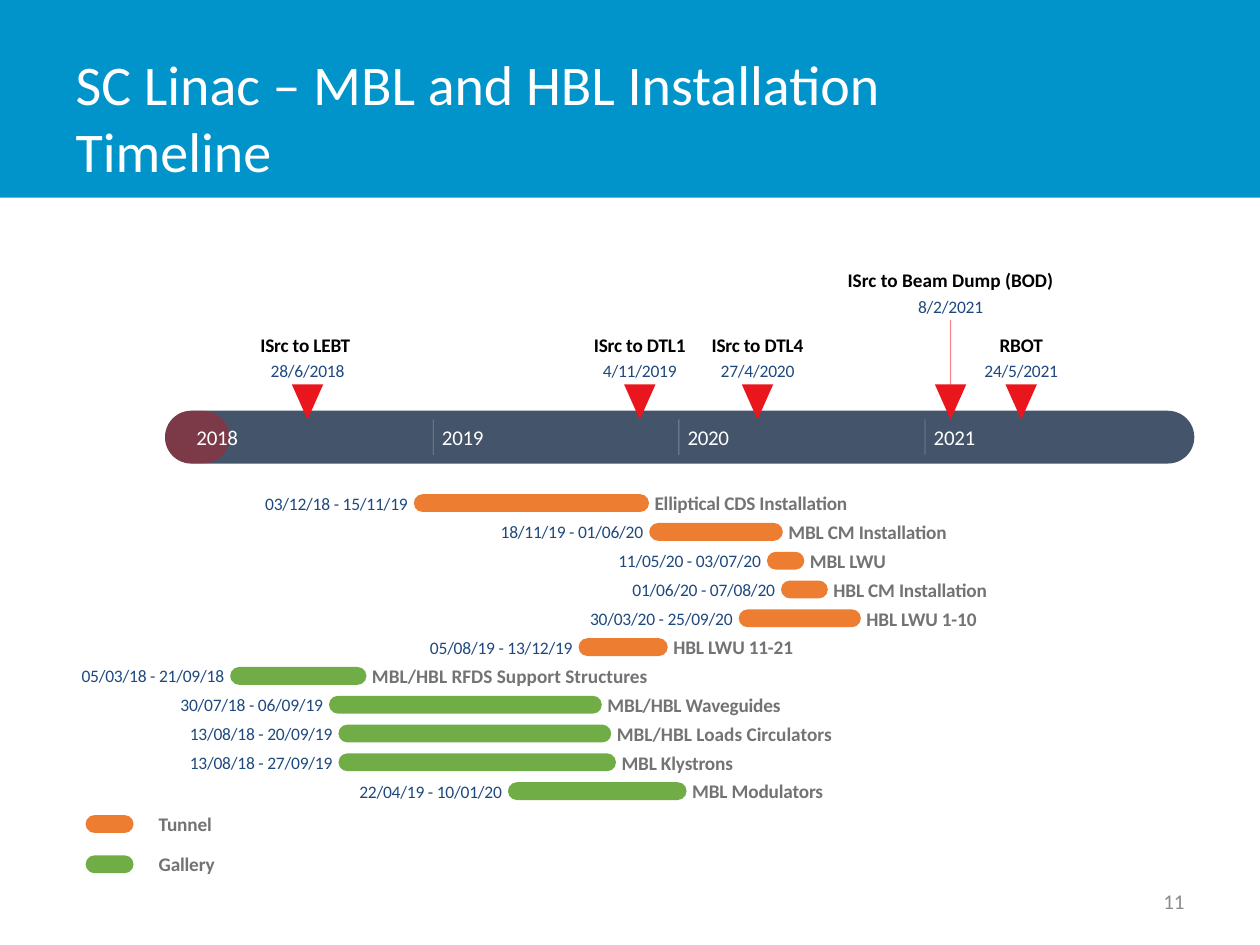
from pptx import Presentation
from pptx.dml.color import RGBColor
from pptx.enum.shapes import MSO_CONNECTOR, MSO_SHAPE
from pptx.enum.text import MSO_ANCHOR, MSO_AUTO_SIZE, PP_ALIGN
from pptx.oxml.ns import qn
from pptx.util import Pt
from lxml.etree import SubElement

BLUE, NAVY, GREY, RED = "0094CA", "1F497E", "737373", "EA161E"
TUNNEL, GALLERY = "ED7D31", "70AD47"
MONTHS = (0, 31, 59, 90, 120, 151, 181, 212, 243, 273, 304, 334)
START, DAY = 107.3, 140.3 / 365
BAR = 10.2

MILES = [
    ("28/6/2018", "ISrc to LEBT ", 55, 0),
    ("4/11/2019", "ISrc to DTL1", 54, 0),
    ("27/4/2020", "ISrc to DTL4", 54, 0),
    ("8/2/2021", "ISrc to Beam Dump (BOD)", 118, 36.7),
    ("24/5/2021", "RBOT", 26, 0),
]
TASKS = [
    ("03/12/18", "15/11/19", "Elliptical CDS Installation", 113, TUNNEL),
    ("18/11/19", "01/06/20", "MBL CM Installation", 93, TUNNEL),
    ("11/05/20", "03/07/20", "MBL LWU", 45, TUNNEL),
    ("01/06/20", "07/08/20", "HBL CM Installation", 90, TUNNEL),
    ("30/03/20", "25/09/20", "HBL LWU 1-10", 65, TUNNEL),
    ("05/08/19", "13/12/19", "HBL LWU 11-21", 70, TUNNEL),
    ("05/03/18", "21/09/18", "MBL/HBL RFDS Support Structures", 158, GALLERY),
    ("30/07/18", "06/09/19", "MBL/HBL Waveguides", 104, GALLERY),
    ("13/08/18", "20/09/19", "MBL/HBL Loads Circulators", 123, GALLERY),
    ("13/08/18", "27/09/19", "MBL Klystrons", 65, GALLERY),
    ("22/04/19", "10/01/20", "MBL Modulators", 77, GALLERY),
]


def color(code):
    return RGBColor.from_string(code)


def spot(date):
    day, month, year = (int(part) for part in date.split("/"))
    year %= 100
    leap = year > 20 or (year == 20 and month > 2)
    return START + DAY * ((year - 18) * 365 + MONTHS[month - 1] + day - 1 + leap)


def fade(fill, share):
    tint = fill.find(".//" + qn("a:srgbClr"))
    SubElement(tint, qn("a:alpha")).set("val", str(share * 1000))


def shape(slide, kind, box, code):
    item = slide.shapes.add_shape(kind, *map(Pt, box))
    item.shadow.inherit = False
    item.fill.solid()
    item.fill.fore_color.rgb = color(code)
    item.line.fill.background()
    return item


def pill(slide, box, code):
    item = shape(slide, MSO_SHAPE.ROUNDED_RECTANGLE, box, code)
    item.adjustments[0] = 0.5
    return item


def rule(slide, x, top, end, code, width, share):
    line = slide.shapes.add_connector(
        MSO_CONNECTOR.STRAIGHT, Pt(x), Pt(top), Pt(x), Pt(end))
    line.line.color.rgb = color(code)
    line.line.width = Pt(width)
    props = line._element.spPr
    fade(props, share)
    SubElement(props, qn("a:effectLst"))


def style(frame, size, code, align=PP_ALIGN.LEFT, bold=False, space=0):
    frame.word_wrap = True
    frame.vertical_anchor = MSO_ANCHOR.MIDDLE
    para = frame.paragraphs[0]
    para.alignment = align
    run = para.runs[0]
    run.font.name = "Calibri"
    run.font.size = Pt(size)
    run.font.bold = bold
    run.font.color.rgb = color(code)
    if space:
        run._r.get_or_add_rPr().set("spc", str(space))


def label(slide, box, text, size, code, align=PP_ALIGN.LEFT, bold=False, space=-10):
    frame = slide.shapes.add_textbox(*map(Pt, box)).text_frame
    frame.margin_left = frame.margin_right = 0
    frame.margin_top = frame.margin_bottom = 0
    frame.text = text
    style(frame, size, code, align, bold, space)


def header(slide, box):
    band = shape(slide, MSO_SHAPE.RECTANGLE, box, BLUE)
    slide.shapes._spTree.insert(2, band._element)
    left, top, width, height = box
    title = slide.shapes.title
    title.left, title.top = Pt(left + 36), Pt(top + 21.6)
    title.width, title.height = Pt(562.3), Pt(height - 1.4 - 21.6)
    frame = title.text_frame
    frame.text = "SC Linac – MBL and HBL Installation Timeline"
    frame.auto_size = MSO_AUTO_SIZE.NONE
    style(frame, 32, "FFFFFF")


def axis(slide, box):
    left, top, width, height = box
    pill(slide, box, "44546A")
    past = pill(slide, (left, top, 36.9, height), "FF0000")
    fade(past._element.spPr, 30)
    for year in range(2018, 2022):
        x = spot(f"1/1/{year}")
        if year > 2018:
            rule(slide, x, top + 5, top + height - 5, "FFFFFF", 0.5, 30)
        label(slide, (x + 5, top + 7.9, 25, 14.4), str(year), 12, "FFFFFF", space=-20)


def miles(slide, top):
    for date, name, width, lift in MILES:
        x, y = spot(date), top - lift
        if lift:
            rule(slide, x, y + 29.6, y + 76.4, RED, 0.75, 50)
        label(slide, (x - width / 2 - 0.5, y, width + 1, 13.5), name, 11, "000000",
              PP_ALIGN.CENTER, True, 0 if lift else -10)
        label(slide, (x - 23, y + 15.8, 46, 12.2), date, 10, NAVY, PP_ALIGN.CENTER)
        mark = shape(slide, MSO_SHAPE.ISOSCELES_TRIANGLE,
                     (x - 9, top + 29.5, 18, 20.2), RED)
        mark._element.spPr.find(qn("a:xfrm")).set("flipV", "1")


def tasks(slide, top, pitch):
    for row, (first, last, name, width, code) in enumerate(TASKS):
        y = top + row * pitch
        x, end = spot(first), spot(last) + 1
        pill(slide, (x, y, end - x, BAR), code)
        label(slide, (x - 88.5, y - 1, 85, 12.2), f"{first} - {last}", 10, NAVY,
              PP_ALIGN.RIGHT)
        label(slide, (end + 3.2, y - 1.6, width + 2, 13.5), name, 11, GREY, bold=True,
              space=0 if width > 120 else -10)


def legend(slide, left, top, pitch):
    for row, (name, code) in enumerate((("Tunnel", TUNNEL), ("Gallery", GALLERY))):
        y = top + row * pitch
        pill(slide, (left, y, 27.4, BAR), code)
        label(slide, (left + 41.8, y - 1.8, 63.4, 13.5), name, 11, GREY, bold=True)


def number(slide, box):
    frame = slide.shapes.add_textbox(*map(Pt, box)).text_frame
    frame.text = "11"
    style(frame, 12, "8C8C8C", PP_ALIGN.RIGHT)


def main():
    deck = Presentation()
    deck.slide_width, deck.slide_height = Pt(720), Pt(540)
    slide = deck.slides.add_slide(deck.slide_layouts[5])
    header(slide, (0, 0, 720, 113))
    axis(slide, (94.3, 234.7, 588.2, 30.2))
    miles(slide, 190.1)
    tasks(slide, 282.4, 16.46)
    legend(slide, 48.9, 465.8, 23)
    number(slide, (516, 500.4, 168, 28.8))
    deck.save("out.pptx")


if __name__ == "__main__":
    main()
